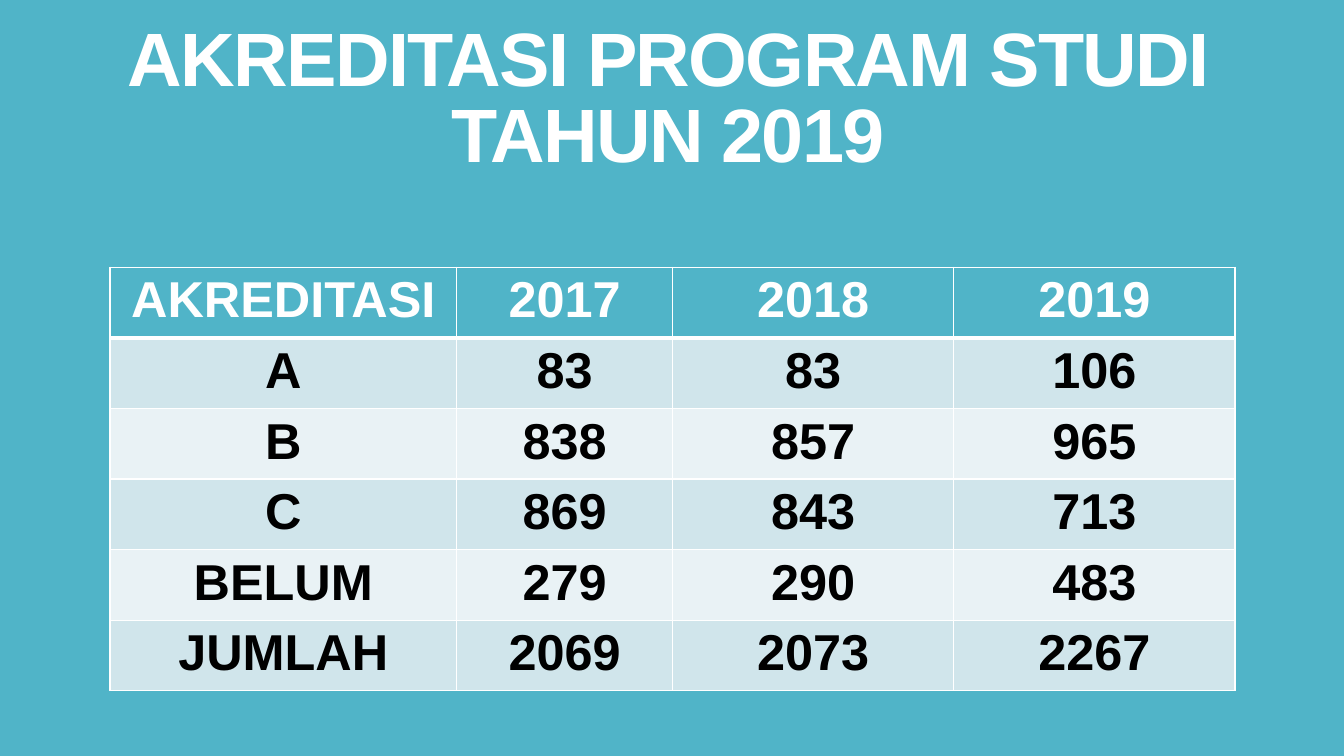
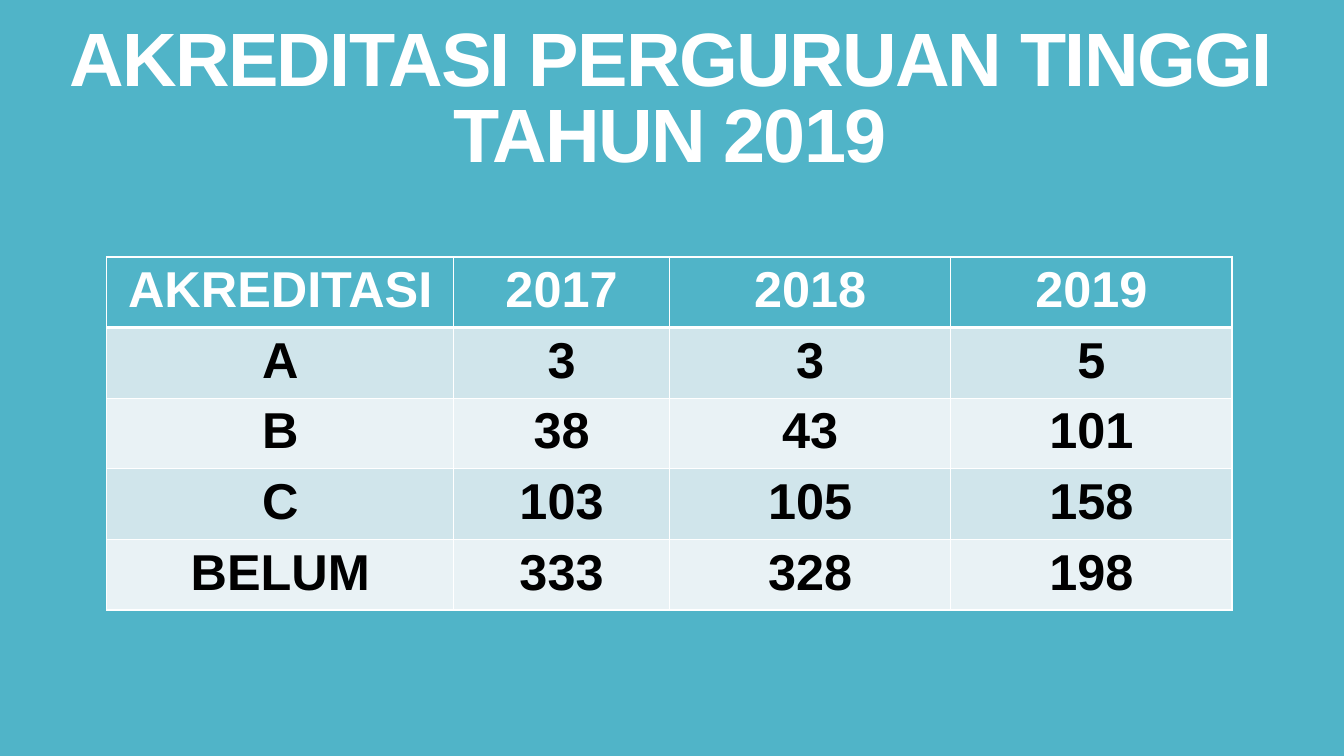
from lxml.etree import SubElement
from pptx import Presentation
from pptx.dml.color import RGBColor
from pptx.enum.text import MSO_ANCHOR, PP_ALIGN
from pptx.oxml.ns import qn
from pptx.util import Inches, Pt

COLORS = {
    "teal": "50B4C8",
    "white": "FFFFFF",
    "black": "000000",
    "odd_row": "D0E5EB",
    "even_row": "E9F2F5",
}
FONT = "Arial"
HEADER = ("AKREDITASI", "2017", "2018", "2019")
COLUMN_WIDTHS = (3.44, 2.14, 2.79, 2.79)
ROW_HEIGHT = 0.66
TITLE_TOP, TITLE_HEIGHT = 0.22, 1.59

SLIDES = [
    {
        "title": "AKREDITASI PROGRAM STUDI TAHUN 2019",
        "title_left": 0.73,
        "title_width": 11.79,
        "table_at": (1.09, 2.65),
        "rows": [
            ("A", 83, 83, 106),
            ("B", 838, 857, 965),
            ("C", 869, 843, 713),
            ("BELUM", 279, 290, 483),
            ("JUMLAH", 2069, 2073, 2267),
        ],
    },
    {
        "title": "AKREDITASI PERGURUAN TINGGI TAHUN 2019",
        "title_left": 0.2,
        "title_width": 12.89,
        "table_at": (1.06, 2.55),
        "rows": [
            ("A", 3, 3, 5),
            ("B", 38, 43, 101),
            ("C", 103, 105, 158),
            ("BELUM", 333, 328, 198),
        ],
    },
]


def color(name):
    return RGBColor.from_string(COLORS[name])


def style_paragraph(paragraph, size, color_name):
    paragraph.alignment = PP_ALIGN.CENTER
    font = paragraph.font
    font.name, font.size, font.bold = FONT, Pt(size), True
    font.color.rgb = color(color_name)


def add_title(slide, text, left, width):
    title = slide.shapes.add_textbox(
        Inches(left), Inches(TITLE_TOP), Inches(width), Inches(TITLE_HEIGHT)
    )
    frame = title.text_frame
    frame.word_wrap = True
    frame.vertical_anchor = MSO_ANCHOR.BOTTOM
    paragraph = frame.paragraphs[0]
    paragraph.line_spacing = 0.84
    style_paragraph(paragraph, 54, "white")
    run = paragraph.add_run()
    run.text = text
    run.font._element.set("spc", "-120")


def add_borders(cell, top, bottom):
    properties = cell._tc.get_or_add_tcPr()
    edges = (("lnL", 1), ("lnR", 1), ("lnT", top), ("lnB", bottom))
    for position, (edge, width) in enumerate(edges):
        line = SubElement(properties, qn(f"a:{edge}"), w=str(Pt(width)))
        fill = SubElement(line, qn("a:solidFill"))
        SubElement(fill, qn("a:srgbClr"), val=COLORS["white"])
        properties.insert(position, line)


def add_accreditation_table(slide, left, top, rows):
    lines = [HEADER, *rows]
    table = slide.shapes.add_table(
        len(lines), len(HEADER), Inches(left), Inches(top),
        Inches(sum(COLUMN_WIDTHS)), Inches(ROW_HEIGHT * len(lines)),
    ).table
    for column, width in zip(table.columns, COLUMN_WIDTHS):
        column.width = Inches(width)
    for r, values in enumerate(lines):
        table.rows[r].height = Inches(ROW_HEIGHT)
        if r == 0:
            fill_name, text_name = "teal", "white"
        else:
            fill_name = "odd_row" if r % 2 else "even_row"
            text_name = "black"
        for c, value in enumerate(values):
            cell = table.cell(r, c)
            cell.text = str(value)
            cell.fill.solid()
            cell.fill.fore_color.rgb = color(fill_name)
            style_paragraph(cell.text_frame.paragraphs[0], 36, text_name)
            add_borders(cell, 3 if r == 1 else 1, 3 if r == 0 else 1)


def main():
    deck = Presentation()
    deck.slide_width, deck.slide_height = Inches(13.33), Inches(7.5)
    background = deck.slide_master.background.fill
    background.solid()
    background.fore_color.rgb = color("teal")
    for content in SLIDES:
        slide = deck.slides.add_slide(deck.slide_layouts[6])
        add_title(slide, content["title"], content["title_left"], content["title_width"])
        add_accreditation_table(slide, *content["table_at"], content["rows"])
    deck.save("out.pptx")


if __name__ == "__main__":
    main()
